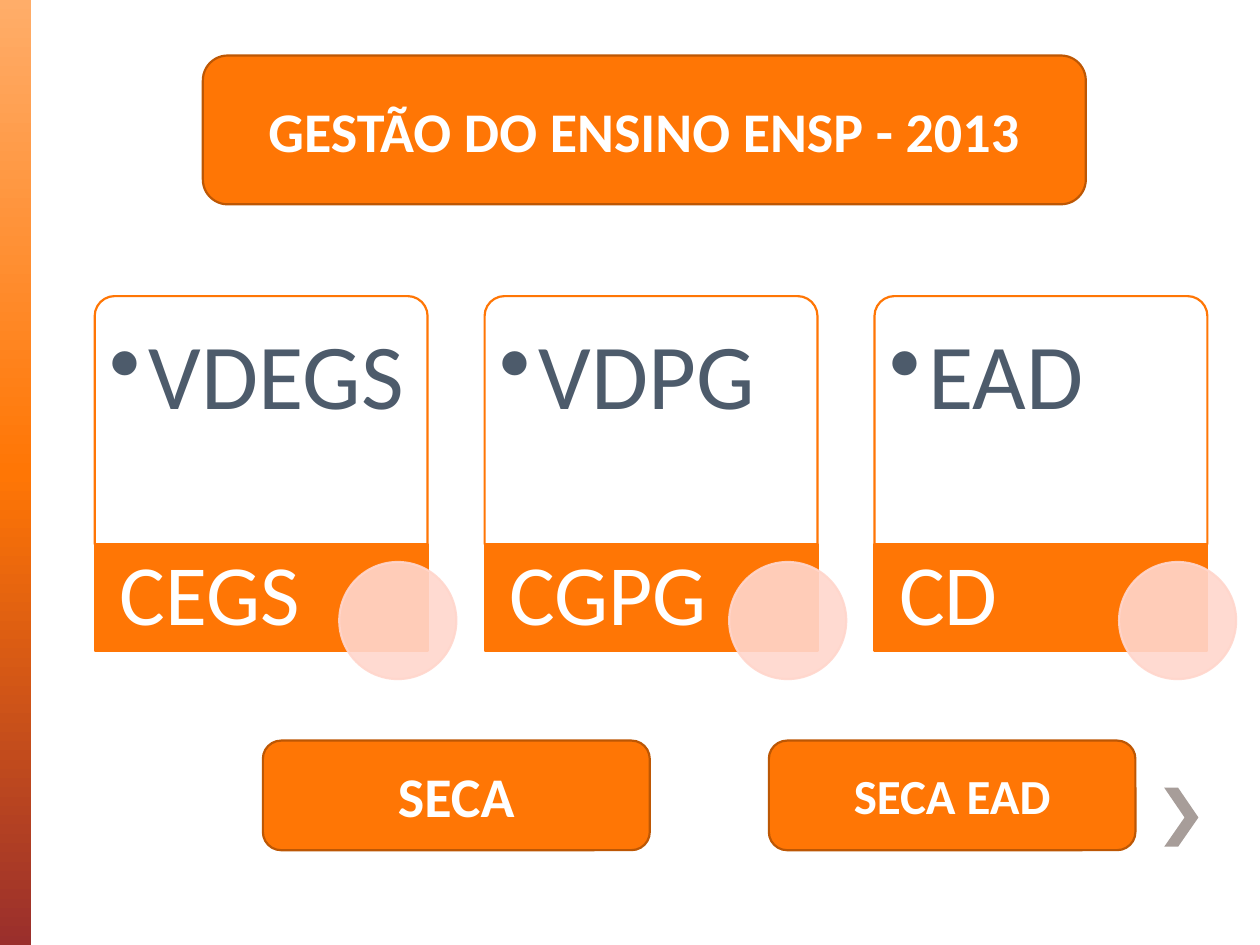
from copy import deepcopy
from dataclasses import dataclass

from lxml import etree
from pptx import Presentation
from pptx import util as u
from pptx.dml.color import RGBColor
from pptx.enum import shapes, text
from pptx.oxml.ns import qn

ORANGE, DARK_ORANGE, PINK = "FF7605", "BD5704", "FFD6CC"
WHITE, SLATE, GREY = "FFFFFF", "4D5B6B", "A79D99"
KIND = shapes.MSO_SHAPE


@dataclass(frozen=True)
class Area:
    """Position and size in centimetres."""
    left: float
    top: float
    width: float
    height: float

    def lengths(self) -> list:
        return [u.Cm(n) for n in (self.left, self.top, self.width, self.height)]


@dataclass(frozen=True)
class Card:
    detail: str
    label: str


@dataclass(frozen=True)
class Button:
    caption: str
    size: int
    area: Area


CARDS = [Card("VDEGS", "CEGS"), Card("VDPG", "CGPG"), Card("EAD", "CD")]
CARD_LEFT, CARD_PITCH = 1.91, 7.86
BUTTONS = [
    Button("SECA", 32, Area(5.3, 14.93, 7.8, 2.21)),
    Button("SECA EAD", 28, Area(15.5, 14.93, 7.39, 2.21)),
    Button("GESTÃO DO ENSINO ENSP - 2013", 32, Area(4.09, 1.12, 17.8, 3)),
]


def color(value: str) -> RGBColor:
    return RGBColor.from_string(value)


def paint(shape, fill: str, line: str | None = None) -> None:
    shape.shadow.inherit = False
    shape.fill.solid()
    shape.fill.fore_color.rgb = color(fill)
    if line:
        shape.line.color.rgb = color(line)
        shape.line.width = u.Pt(1.25)
    else:
        shape.line.fill.background()


def add_box(page, kind, area: Area, fill: str, line: str | None = None):
    box = page.shapes.add_shape(kind, *area.lengths())
    paint(box, fill, line)
    return box


def set_alpha(shape, percent: int) -> None:
    for tone in shape._element.spPr.iter(qn("a:srgbClr")):
        etree.SubElement(tone, qn("a:alpha"), val=str(percent * 1000))


def write(box, words: str, *, size: int, tone: str = WHITE, bold: bool = False,
          align=text.PP_ALIGN.LEFT, anchor=text.MSO_ANCHOR.MIDDLE,
          margins: tuple = (0.25, 0.13, 0.25, 0.13), spacing: float = 1.0):
    frame = box.text_frame
    frame.word_wrap = True
    frame.vertical_anchor = anchor
    (frame.margin_left, frame.margin_top,
     frame.margin_right, frame.margin_bottom) = [u.Cm(n) for n in margins]
    para = frame.paragraphs[0]
    para.alignment = align
    para.line_spacing = spacing
    span = para.add_run()
    span.text = words
    span.font.name = "Calibri"
    span.font.size = u.Pt(size)
    span.font.bold = bold
    span.font.color.rgb = color(tone)
    return para


def add_bullet(para, indent: float) -> None:
    props = para._p.get_or_add_pPr()
    props.set("marL", str(u.Cm(indent)))
    props.set("indent", str(-u.Cm(indent)))
    etree.SubElement(props, qn("a:buChar"), char="•")


def add_side_band(page) -> None:
    band = add_box(page, KIND.RECTANGLE, Area(0, 0, 0.63, 19.05), ORANGE)
    band.fill.gradient()
    band.fill.gradient_angle = 270
    first = band.fill.gradient_stops[0]._gs
    first.addnext(deepcopy(first))
    stops = zip(band.fill.gradient_stops, ("FFAD69", ORANGE, "9A2F2C"), (0, 0.5, 1))
    for stop, tone, position in stops:
        stop.color.rgb = color(tone)
        stop.position = position


def add_chevron(page) -> None:
    left, top, right, middle, bottom, thick = 23.47, 15.88, 24.16, 16.48, 17.07, 0.28
    points = [(left + thick, top), (left, top), (right - thick, middle),
              (left, bottom), (left + thick, bottom), (right, middle)]
    corners = [(u.Cm(x), u.Cm(y)) for x, y in points]
    outline = page.shapes.build_freeform(*corners[0])
    outline.add_line_segments(corners[1:], close=True)
    paint(outline.convert_to_shape(), GREY)


def add_card(page, card: Card, left: float) -> None:
    # Upper panel with its bulleted text
    panel = add_box(page, KIND.ROUND_2_SAME_RECTANGLE,
                    Area(left, 5.97, 6.71, 5), WHITE, ORANGE)
    panel.adjustments[0] = 0.08
    detail = page.shapes.add_textbox(*Area(left + 0.12, 6.09, 6.48, 4.9).lengths())
    para = write(detail, card.detail, size=53, tone=SLATE, spacing=0.9,
                 anchor=text.MSO_ANCHOR.TOP, margins=(0.18, 0.56, 0.18, 0.18))
    add_bullet(para, 0.79)

    # Lower strip with its label and circle
    add_box(page, KIND.RECTANGLE, Area(left, 10.97, 6.71, 2.16), ORANGE, ORANGE)
    label = page.shapes.add_textbox(*Area(left, 10.97, 4.72, 2.16).lengths())
    write(label, card.label, size=49, spacing=0.9, margins=(0.5, 0, 0.18, 0))
    circle = add_box(page, KIND.OVAL, Area(left + 4.93, 11.33, 2.36, 2.36), PINK, PINK)
    for shape in (panel.fill, circle.fill):
        shape.fore_color.rgb = shape.fore_color.rgb
    set_alpha(circle, 90)


def add_button(page, button: Button) -> None:
    box = add_box(page, KIND.ROUNDED_RECTANGLE, button.area, ORANGE, DARK_ORANGE)
    write(box, button.caption, size=button.size, bold=True,
          align=text.PP_ALIGN.CENTER)


def main() -> None:
    deck = Presentation()
    deck.slide_width, deck.slide_height = u.Cm(25.4), u.Cm(19.05)
    page = deck.slides.add_slide(deck.slide_layouts[6])

    # Page decoration
    add_side_band(page)
    add_chevron(page)

    # Row of cards
    for index, card in enumerate(CARDS):
        add_card(page, card, CARD_LEFT + index * CARD_PITCH)

    # Title and lower buttons
    for button in BUTTONS:
        add_button(page, button)

    deck.save("out.pptx")


if __name__ == "__main__":
    main()
